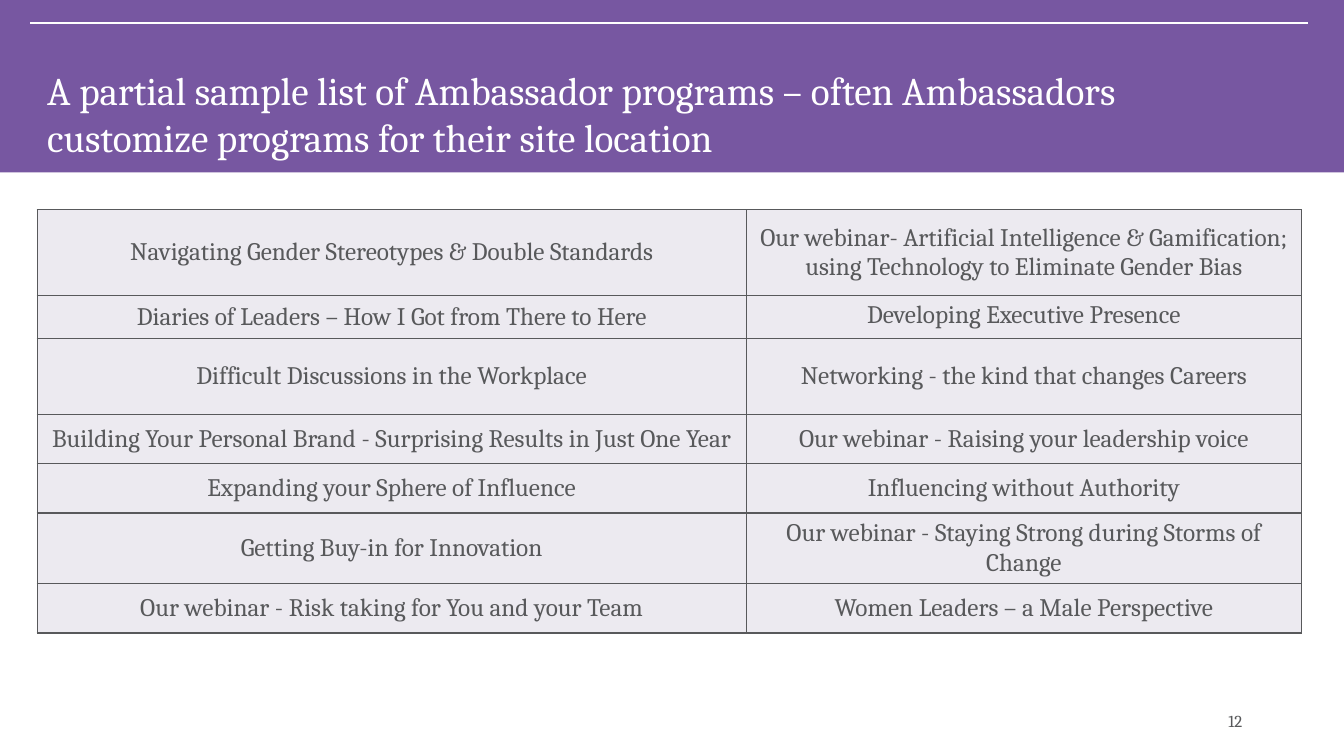
import pptx
import pptx.dml.color
import pptx.enum.shapes
import pptx.enum.text
import pptx.oxml
import pptx.oxml.ns
import pptx.util
from lxml import etree

Inches, Pt = pptx.util.Inches, pptx.util.Pt
RGBColor = pptx.dml.color.RGBColor
ANCHOR, ALIGN = pptx.enum.text.MSO_ANCHOR, pptx.enum.text.PP_ALIGN
qn = pptx.oxml.ns.qn

# Content
TITLE = ("A partial sample list of Ambassador programs – often Ambassadors "
         "customize programs for their site location")
PAGE = "12"
PROGRAMS = [  # row height, left program, right program
    (0.85, "Navigating Gender Stereotypes & Double Standards",
     "Our webinar- Artificial Intelligence & Gamification; "
     "using Technology to Eliminate Gender Bias"),
    (0.43, "Diaries of Leaders – How I Got from There to Here",
     "Developing Executive Presence"),
    (0.75, "Difficult Discussions in the Workplace",
     "Networking - the kind that changes Careers"),
    (0.49, "Building Your Personal Brand - Surprising Results in Just One Year",
     "Our webinar - Raising your leadership voice"),
    (0.49, "Expanding your Sphere of Influence", "Influencing without Authority"),
    (0.69, "Getting Buy-in for Innovation",
     "Our webinar - Staying Strong during Storms of Change"),
    (0.49, "Our webinar - Risk taking for You and your Team",
     "Women Leaders – a Male Perspective"),
]
COLUMN_WIDTHS = (7.03, 5.51)
TOP_ANCHORED = "Developing Executive Presence"

# Look
FONT = "Cambria"
PURPLE = RGBColor(0x77, 0x57, 0xA1)
WHITE = RGBColor(0xFF, 0xFF, 0xFF)
GRAY = RGBColor(0x58, 0x59, 0x5B)
LILAC = RGBColor(0xEC, 0xEA, 0xF0)


def write(frame, text, size, color, align, anchor):
    frame.word_wrap = True
    frame.vertical_anchor = anchor
    paragraph = frame.paragraphs[0]
    paragraph.alignment = align
    run = paragraph.add_run()
    run.text = text
    run.font.name = FONT
    run.font.size = Pt(size)
    run.font.color.rgb = color


def add_borders(cell, color, width):
    properties = cell._tc.get_or_add_tcPr()
    for position, side in enumerate(("a:lnL", "a:lnR", "a:lnT", "a:lnB")):
        border = etree.Element(qn(side), w=str(Pt(width)))
        fill = etree.SubElement(border, qn("a:solidFill"))
        etree.SubElement(fill, qn("a:srgbClr"), val=str(color))
        properties.insert(position, border)


presentation = pptx.Presentation()
presentation.slide_width, presentation.slide_height = Inches(13.33), Inches(7.5)
slide = presentation.slides.add_slide(presentation.slide_layouts[6])
shapes = slide.shapes

# Header band and rule
band = shapes.add_shape(pptx.enum.shapes.MSO_SHAPE.RECTANGLE,
                        0, 0, Inches(13.33), Inches(1.71))
band.shadow.inherit = False
band.fill.solid()
band.fill.fore_color.rgb = PURPLE
band.line.fill.background()

rule = shapes.add_connector(pptx.enum.shapes.MSO_CONNECTOR.STRAIGHT,
                            Inches(0.3), Inches(0.23), Inches(12.97), Inches(0.23))
rule.line.color.rgb = WHITE
rule.line.width = Pt(1.5)
etree.SubElement(rule._element.spPr, qn("a:effectLst"))

# Title and page number
title = shapes.add_textbox(Inches(0.37), Inches(0.61), Inches(11.58), Inches(1.1))
write(title.text_frame, TITLE, 28, WHITE, ALIGN.LEFT, ANCHOR.TOP)
page = shapes.add_textbox(Inches(9.42), Inches(6.95), Inches(3), Inches(0.4))
write(page.text_frame, PAGE, 12, GRAY, ALIGN.RIGHT, ANCHOR.MIDDLE)

# Program table
programs = shapes.add_table(
    len(PROGRAMS), len(COLUMN_WIDTHS), Inches(0.37), Inches(2.08),
    Inches(sum(COLUMN_WIDTHS)), Inches(sum(row[0] for row in PROGRAMS))).table
programs.first_row = programs.horz_banding = False
for column, width in zip(programs.columns, COLUMN_WIDTHS):
    column.width = Inches(width)
for row, (height, *names) in zip(programs.rows, PROGRAMS):
    row.height = Inches(height)
    for cell, name in zip(row.cells, names):
        anchor = ANCHOR.TOP if name == TOP_ANCHORED else ANCHOR.MIDDLE
        write(cell.text_frame, name, 18, GRAY, ALIGN.CENTER, ANCHOR.TOP)
        cell.vertical_anchor = anchor
        cell.fill.solid()
        cell.fill.fore_color.rgb = LILAC
        add_borders(cell, GRAY, 1)

presentation.save("out.pptx")
